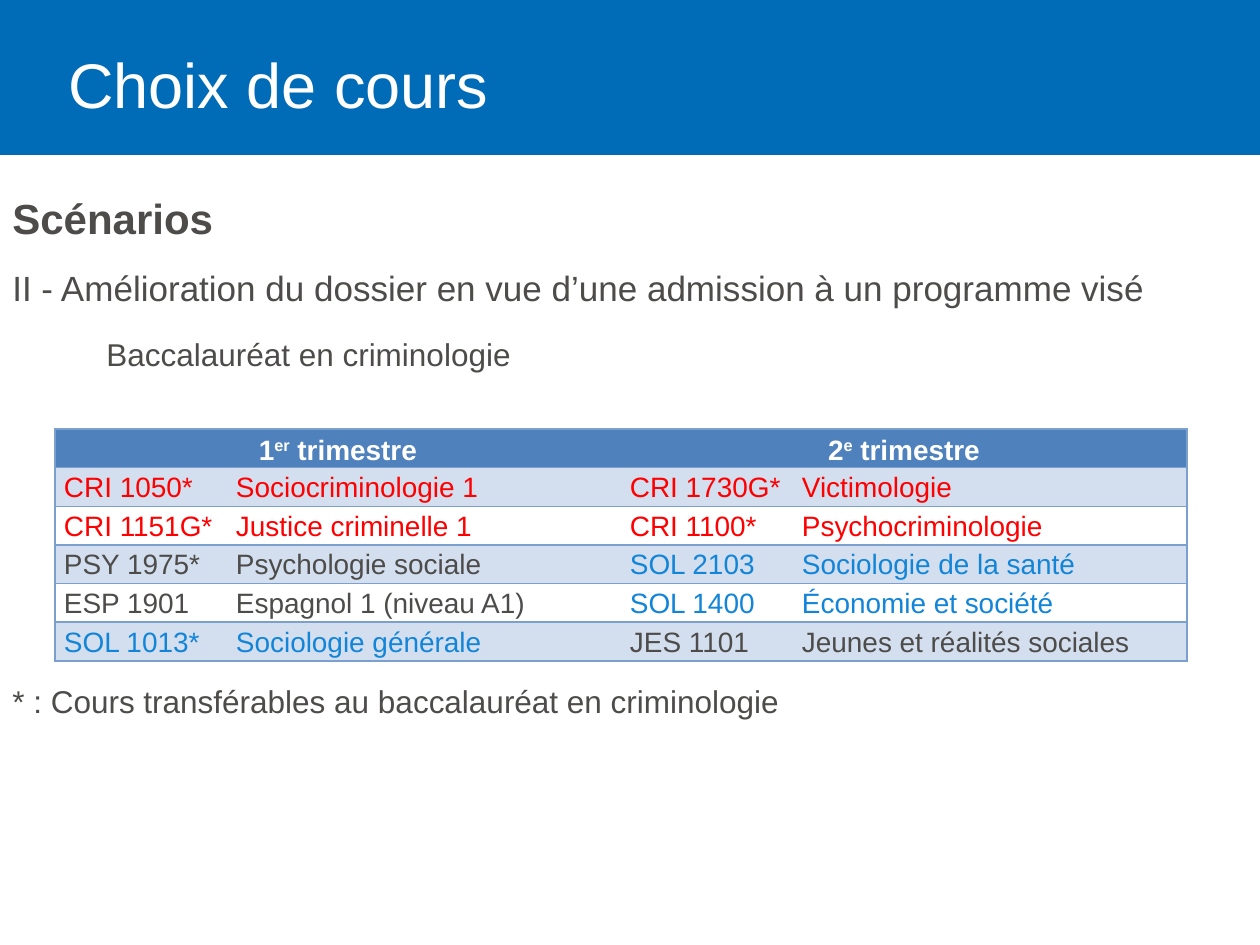
from lxml import etree
from pptx import Presentation
from pptx import util as u
from pptx.dml.color import RGBColor
from pptx.enum import shapes, text
from pptx.oxml.ns import qn

SCALE = 914400 / 126
GREY, RED, BLUE, WHITE = "4D4C4A", "FF0000", "1285D9", "FFFFFF"
HEADER, BAND, BORDER = "4F81BD", "D3DFEE", "7BA0CD"

TERMS = [("1", "er", " trimestre"), ("2", "e", " trimestre")]
COURSES = [
    (("CRI 1050*", "Sociocriminologie 1", RED), ("CRI 1730G*", "Victimologie", RED)),
    (("CRI 1151G*", "Justice criminelle 1", RED), ("CRI 1100*", "Psychocriminologie", RED)),
    (("PSY 1975*", "Psychologie sociale", GREY), ("SOL 2103", "Sociologie de la santé", BLUE)),
    (("ESP 1901", "Espagnol 1 (niveau A1)", GREY), ("SOL 1400", "Économie et société", BLUE)),
    (("SOL 1013*", "Sociologie générale", BLUE), ("JES 1101", "Jeunes et réalités sociales", GREY)),
]


def px(n):
    """Turn pixels into EMU."""
    return u.Emu(round(n * SCALE))


def rgb(color):
    """Turn a hex string into a colour."""
    return RGBColor.from_string(color)


def style(p, size, color, bold=False):
    """Format every run of a paragraph."""
    for r in p.runs:
        r.font.name, r.font.size, r.font.bold = "Arial", u.Pt(size), bold
        r.font.color.rgb = rgb(color)


def textbox(s, box):
    """Add a wrapping text box and return its text frame."""
    tf = s.shapes.add_textbox(*map(px, box)).text_frame
    tf.word_wrap = True
    return tf


def banner(s, box):
    """Draw the coloured band with the slide title."""
    x, y, w, h = box
    sp = s.shapes.add_shape(shapes.MSO_SHAPE.RECTANGLE, *map(px, box))
    sp.shadow.inherit = False
    sp.fill.solid()
    sp.fill.fore_color.rgb = rgb("006BB6")
    sp.line.fill.background()
    tf = textbox(s, (x + 56, y + 26, w - 112, h - 30))
    tf.vertical_anchor = text.MSO_ANCHOR.MIDDLE
    p = tf.paragraphs[0]
    p.text = "Choix de cours"
    p.line_spacing = 0.9
    style(p, 36, WHITE)


def intro(s, box):
    """Write the heading, the scenario and the indented programme."""
    tf = textbox(s, box)
    lines = [
        ("Scénarios", 24, True, 0),
        ("II - Amélioration du dossier en vue d’une admission à un programme visé", 20, False, 6),
        ("Baccalauréat en criminologie", 18, False, 8),
    ]
    tf.text = "\n".join(line[0] for line in lines)
    for p, (_, size, bold, before) in zip(tf.paragraphs, lines):
        p.line_spacing = 1.05
        p.space_before, p.space_after = u.Pt(before), u.Pt(6)
        style(p, size, GREY, bold)
    p._p.get_or_add_pPr().set("marL", str(px(94)))


def footnote(s, box):
    """Write the meaning of the asterisk."""
    p = textbox(s, box).paragraphs[0]
    p.text = "* : Cours transférables au baccalauréat en criminologie"
    style(p, 18, GREY)


def dress_cell(cell, fill, sides):
    """Set margins, borders on the given sides, and the fill of a cell."""
    cell.margin_left = cell.margin_right = px(9)
    cell.margin_top = cell.margin_bottom = 0
    tcPr = cell._tc.get_or_add_tcPr()
    for side in "LRTB":
        ln = etree.SubElement(tcPr, qn(f"a:ln{side}"), w=str(u.Pt(1)))
        if side in sides:
            solid = etree.SubElement(ln, qn("a:solidFill"))
            etree.SubElement(solid, qn("a:srgbClr"), val=BORDER)
        else:
            etree.SubElement(ln, qn("a:noFill"))
    if fill:
        cell.fill.solid()
        cell.fill.fore_color.rgb = rgb(fill)
    else:
        cell.fill.background()


def write_term(cell, parts):
    """Write a column heading with a raised ordinal ending."""
    cell.vertical_anchor = text.MSO_ANCHOR.MIDDLE
    p = cell.text_frame.paragraphs[0]
    p.alignment = text.PP_ALIGN.CENTER
    p.line_spacing = 1.15
    for part in parts:
        p.add_run().text = part
    style(p, 16, WHITE, True)
    p.runs[1].font._element.set("baseline", "30000")


def write_course(cell, code, name, color):
    """Write a course code and its name at a common tab stop."""
    p = cell.text_frame.paragraphs[0]
    p.line_spacing = 1.15
    tabs = etree.SubElement(p._p.get_or_add_pPr(), qn("a:tabLst"))
    etree.SubElement(tabs, qn("a:tab"), pos=str(px(172)), algn="l")
    p.add_run().text = f"{code}\t{name}"
    style(p, 16, color)


def course_table(s, box):
    """Build the table of courses by term."""
    rows = [TERMS] + COURSES
    table = s.shapes.add_table(len(rows), 2, *map(px, box)).table
    table.first_row = table.horz_banding = False
    for i, row in enumerate(rows):
        fill = BAND if i % 2 else None
        for j, item in enumerate(row):
            cell = table.cell(i, j)
            dress_cell(cell, fill if i else HEADER, "TB" + "LR"[j])
            if i:
                write_course(cell, *item)
            else:
                write_term(cell, item)


def main():
    """Build and save the slide."""
    prs = Presentation()
    prs.slide_width, prs.slide_height = px(1260), px(945)
    s = prs.slides.add_slide(prs.slide_layouts[6])
    banner(s, (0, 0, 1260, 155))
    intro(s, (0, 184, 1260, 200))
    course_table(s, (55, 429, 1132, 215))
    footnote(s, (0, 676, 1260, 50))
    prs.save("out.pptx")


if __name__ == "__main__":
    main()
